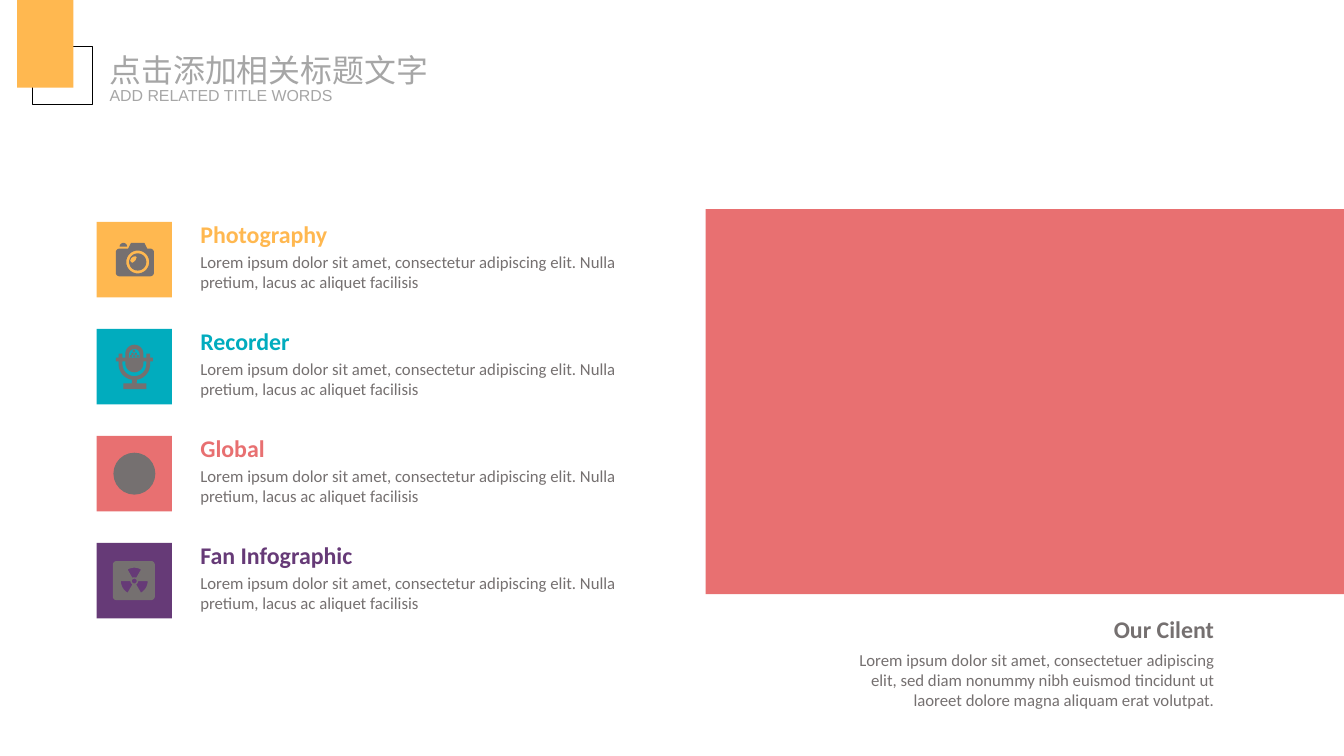
from math import cos, radians, sin

from lxml import etree
from pptx import Presentation
from pptx.dml.color import RGBColor
from pptx.enum.shapes import MSO_SHAPE
from pptx.enum.text import MSO_ANCHOR, MSO_AUTO_SIZE, PP_ALIGN
from pptx.oxml.ns import qn
from pptx.util import Pt

RECT = MSO_SHAPE.RECTANGLE
OVAL = MSO_SHAPE.OVAL
TOP, MIDDLE = MSO_ANCHOR.TOP, MSO_ANCHOR.MIDDLE
NO_FIT = MSO_AUTO_SIZE.NONE
LEFT, RIGHT = PP_ALIGN.LEFT, PP_ALIGN.RIGHT

YELLOW = RGBColor(0xFF, 0xB8, 0x50)
TEAL = RGBColor(0x01, 0xAC, 0xBE)
CORAL = RGBColor(0xE8, 0x70, 0x71)
PURPLE = RGBColor(0x66, 0x3A, 0x77)
GREY = RGBColor(0x75, 0x70, 0x70)
LIGHT_GREY = RGBColor(0xA6, 0xA6, 0xA6)
BLACK = RGBColor(0, 0, 0)

TILE = 56.8
DISC = 31.6
ICON_UNIT = TILE / 79  # icons are drawn on a 79 x 79 grid
BODY_SIZE = 12.6
LOREM = ("Lorem ipsum dolor sit amet, consectetur adipiscing elit. "
         "Nulla pretium, lacus ac aliquet facilisis")
CLIENT_TEXT = ("Lorem ipsum dolor sit amet, consectetuer adipiscing elit, sed diam "
               "nonummy nibh euismod tincidunt ut laoreet dolore magna aliquam "
               "erat volutpat.")


def arc(cx, cy, r, start, end, steps=12):
    """Points along an arc; degrees run clockwise from the right."""
    angles = [radians(start + (end - start) * i / steps) for i in range(steps + 1)]
    return [(cx + r * cos(a), cy + r * sin(a)) for a in angles]


def circle(cx, cy, r):
    return arc(cx, cy, r, 0, 360, 36)


def camera_icon():
    body = (arc(24, 32, 4, 180, 270) + [(33, 28), (36, 22), (50, 22), (53, 28)]
            + arc(56, 32, 4, 270, 360) + arc(56, 53, 4, 0, 90) + arc(24, 53, 4, 90, 180))
    glint = [(41, 36), (38, 36.5), (36, 38), (35, 41), (37, 43), (39, 42), (41, 40), (42, 37)]
    return [body, arc(28, 26, 4, 180, 360), circle(43, 42, 12), circle(43, 42, 9), glint]


def microphone_icon():
    body = (arc(39.5, 26, 9.5, 180, 360)
            + [(49, 30), (52, 30), (52, 26), (56, 26), (56, 30), (59, 30), (59, 34), (56, 34)]
            + arc(39.5, 37, 16.5, 0, 81)
            + [(42, 57), (52, 57), (52, 63), (28, 63), (28, 57), (37, 57)]
            + arc(39.5, 37, 16.5, 99, 180)
            + [(23, 34), (20, 34), (20, 30), (23, 30), (23, 26), (27, 26), (27, 30), (30, 30)])
    cradle = ([(49, 34)] + arc(39.5, 36, 9.5, 0, 180) + [(30, 34), (27, 34)]
              + arc(39.5, 37, 12.5, 180, 0) + [(52, 34)])
    grille = arc(39.5, 26.5, 5.5, 180, 360) + [(45, 30), (34, 30)]
    dots = [circle(x, y, 1.2) for x, y in
            [(39, 23), (37.5, 26), (41, 26), (36, 28.5), (39.5, 28.5), (43, 28.5)]]
    return [body, cradle, grille, *dots]


def fan_icon():
    plate = (arc(21, 23, 4, 180, 270) + arc(57, 23, 4, 270, 360)
             + arc(57, 56, 4, 0, 90) + arc(21, 56, 4, 90, 180))
    blades = [arc(39.5, 40, 14, a, a + 60) + arc(39.5, 40, 4, a + 60, a)
              for a in (0, 120, 240)]
    return [plate, circle(39.5, 40, 2.5), *blades]


def add_shape(slide, x, y, w, h, fill=None, line=None, kind=RECT):
    s = slide.shapes.add_shape(kind, Pt(x), Pt(y), Pt(w), Pt(h))
    s.shadow.inherit = False
    if fill is None:
        s.fill.background()
    else:
        s.fill.solid()
        s.fill.fore_color.rgb = fill
    if line is None:
        s.line.fill.background()
    else:
        s.line.color.rgb = line
        s.line.width = Pt(1)


def add_icon(slide, x, y, contours):
    """Draw the contours as one shape; a contour inside another cuts a hole."""
    scaled = [[(Pt(px * ICON_UNIT), Pt(py * ICON_UNIT)) for px, py in c] for c in contours]
    builder = slide.shapes.build_freeform(*scaled[0][0])
    for i, points in enumerate(scaled):
        if i:
            builder.move_to(*points[0])
        builder.add_line_segments(points[1:], close=True)
    s = builder.convert_to_shape(Pt(x), Pt(y))
    s.shadow.inherit = False
    s.fill.solid()
    s.fill.fore_color.rgb = GREY
    s.line.fill.background()


def write(tf, text, size, color, font="Calibri", bold=False, align=LEFT):
    p = tf.paragraphs[0]
    p.alignment = align
    r = p.add_run()
    r.text = text
    r.font.name, r.font.size, r.font.bold = font, Pt(size), bold
    r.font.color.rgb = color
    return r


def strip_frame(tf, anchor):
    tf.margin_left = tf.margin_right = tf.margin_top = tf.margin_bottom = 0
    tf.word_wrap = False
    tf.auto_size = NO_FIT
    tf.vertical_anchor = anchor


def add_text(slide, x, y, w, h, text, size, color, **style):
    tf = slide.shapes.add_textbox(Pt(x), Pt(y), Pt(w), Pt(h)).text_frame
    tf.word_wrap = True
    write(tf, text, size, color, **style)
    return tf


def add_header(slide, x, y):
    add_shape(slide, x + 11.5, y + 35, 45.2, 43.5, line=BLACK)
    add_shape(slide, x, y, 42.3, 66, fill=YELLOW)
    title = slide.shapes.title
    title.left, title.top = Pt(x + 69.5), Pt(y + 38.2)
    title.width, title.height = Pt(243), Pt(29)
    strip_frame(title.text_frame, MIDDLE)
    r = write(title.text_frame, "点击添加相关标题文字", 24, LIGHT_GREY, font="Noto Sans CJK SC")
    ea = etree.SubElement(r.font._element, qn("a:ea"))
    ea.set("typeface", "Noto Sans CJK SC")
    tf = add_text(slide, x + 69.5, y + 64.6, 170, 14.5, "ADD RELATED TITLE WORDS", 12,
                  LIGHT_GREY, font="Arial")
    strip_frame(tf, TOP)


def add_service(slide, x, y, name, color, icon):
    """Place one tile with its texts; without icon contours the tile holds a plain disc."""
    add_shape(slide, x, y, TILE, TILE, fill=color)
    if icon:
        add_icon(slide, x, y, icon)
    else:
        inset = (TILE - DISC) / 2
        add_shape(slide, x + inset, y + inset, DISC, DISC, fill=GREY, kind=OVAL)
    add_text(slide, x + 71, y - 5, 347, 29, name, 18, color, bold=True)
    add_text(slide, x + 71, y + 19, 347, 38, LOREM, BODY_SIZE, GREY)


def add_client(slide, x, y, w, h):
    add_shape(slide, x, y, w, h, fill=CORAL)
    text_x, text_w = x + 91, 299
    add_text(slide, text_x, y + h + 12, text_w, 29, "Our Cilent", 18, GREY,
             bold=True, align=RIGHT)
    add_text(slide, text_x, y + h + 38.2, text_w, 53, CLIENT_TEXT, BODY_SIZE, GREY, align=RIGHT)


def main():
    prs = Presentation()
    prs.slide_width, prs.slide_height = Pt(1012.3), Pt(569.5)
    slide = prs.slides.add_slide(prs.slide_layouts[5])
    add_header(slide, 13, 0)
    services = [("Photography", YELLOW, camera_icon()), ("Recorder", TEAL, microphone_icon()),
                ("Global", CORAL, None), ("Fan Infographic", PURPLE, fan_icon())]
    for i, (name, color, icon) in enumerate(services):
        add_service(slide, 72.8, 167.2 + 80.6 * i, name, color, icon)
    add_client(slide, 531.5, 157.5, 480.8, 290)
    prs.save("out.pptx")


if __name__ == "__main__":
    main()
